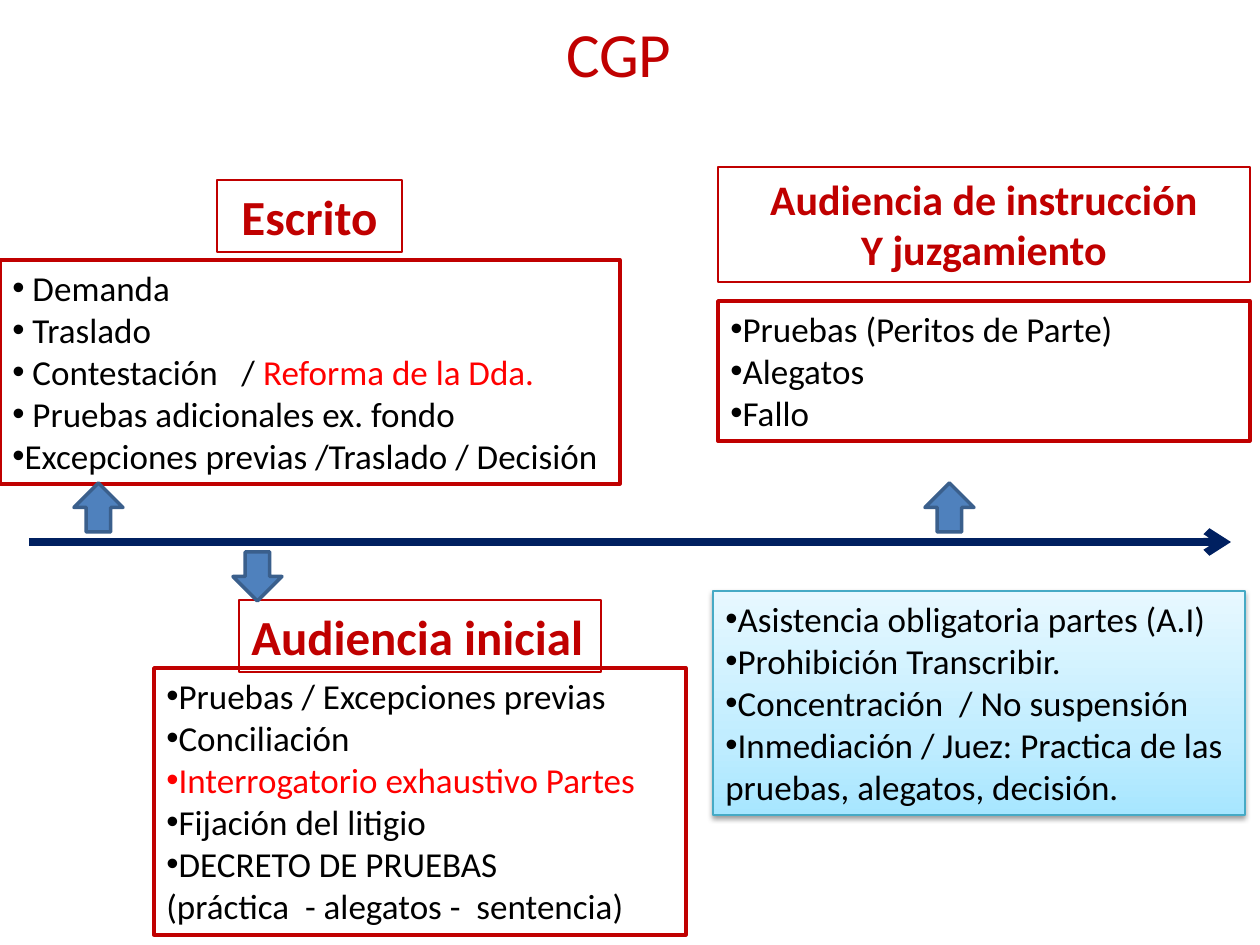
from copy import deepcopy
from lxml import etree
from pptx import Presentation
from pptx import util as u
from pptx.dml.color import RGBColor
from pptx.enum import shapes, text
from pptx.oxml import ns

PX = u.Inches(1) / 126
FONT = "Calibri"
CRIMSON, RED, BLACK, WHITE = "C00000", "FF0000", "000000", "FFFFFF"
NAVY, BLUE, BLUE_EDGE, CYAN = "002060", "4F81BD", "3A5F8C", "46AAC5"
GRADIENT = [(0, "A7E6FF"), (0.35, "C1EDFF"), (1, "E7F8FF")]

HEADINGS = [
    ((553, 8, 146, 89), ["CGP "], 36, False, True, None),
    ((217, 180, 185, 72), [" Escrito "], 28, True, True, CRIMSON),
    ((718, 167, 532, 115), ["Audiencia de instrucción", "Y juzgamiento"], 24, True, True, CRIMSON),
    ((239, 600, 362, 72), ["Audiencia inicial"], 28, True, False, CRIMSON),
]

WRITTEN = [
    ("•", [(" Demanda", BLACK)]),
    ("•", [(" Traslado", BLACK)]),
    ("•", [(" Contestación   / ", BLACK), ("Reforma de la Dda.", RED)]),
    ("•", [(" Pruebas adicionales ex. fondo", BLACK)]),
    ("•", [("Excepciones previas /Traslado / Decisión", BLACK)]),
]
TRIAL = [
    ("•", [("Pruebas (Peritos de Parte)", BLACK)]),
    ("•", [("Alegatos", BLACK)]),
    ("•", [("Fallo", BLACK)]),
]
INITIAL = [
    ("•", [("Pruebas / Excepciones previas", BLACK)]),
    ("•", [("Conciliación", BLACK)]),
    ("•", [("Interrogatorio exhaustivo Partes", RED)]),
    ("•", [("Fijación del litigio", BLACK)]),
    ("•", [("DECRETO DE PRUEBAS", BLACK)]),
    ("", [("(práctica  - alegatos -  sentencia)", BLACK)]),
]
RULES = [
    ("•", [("Asistencia obligatoria partes (A.I)", BLACK)]),
    ("•", [("Prohibición Transcribir.", BLACK)]),
    ("•", [("Concentración  / No suspensión", BLACK)]),
    ("•", [("Inmediación / Juez: Practica de las pruebas, alegatos, decisión.", BLACK)]),
]
LISTS = [
    ((0, 260, 620, 224), WRITTEN, CRIMSON, 2),
    ((718, 301, 532, 140), TRIAL, CRIMSON, 2),
    ((154, 668, 532, 267), INITIAL, CRIMSON, 2),
    ((713, 591, 532, 224), RULES, CYAN, 0.75),
]

TIMELINE = (29, 1231, 542)
ARROW_SIZE = 49
ARROWS = [(74, 483, False), (925, 483, False), (233, 552, True)]


def px(*lengths):
    return [u.Emu(round(length * PX)) for length in lengths]


def color(value):
    return RGBColor.from_string(value)


def style_line(line, value, width):
    line.color.rgb = color(value)
    line.width = u.Pt(width)


def add_child(parent, tag, **attributes):
    return etree.SubElement(parent, ns.qn(tag), attributes)


def style_run(run, size, value, bold=False):
    run.font.name = FONT
    run.font.size = u.Pt(size)
    run.font.bold = bold
    run.font.color.rgb = color(value)


def add_heading(slide, box, lines, size, bold, centered, border):
    shape = slide.shapes.add_textbox(*px(*box))
    frame = shape.text_frame
    frame.word_wrap = len(lines) > 1
    frame.text = "\n".join(lines)
    for paragraph in frame.paragraphs:
        paragraph.alignment = text.PP_ALIGN.CENTER if centered else text.PP_ALIGN.LEFT
        style_run(paragraph.runs[0], size, CRIMSON, bold)
    if border:
        style_line(shape.line, border, 0.75)


def add_list(slide, box, items, border, width):
    shape = slide.shapes.add_textbox(*px(*box))
    shape.fill.solid()
    shape.fill.fore_color.rgb = color(WHITE)
    style_line(shape.line, border, width)
    frame = shape.text_frame
    frame.word_wrap = True
    for index, (bullet, runs) in enumerate(items):
        paragraph = frame.add_paragraph() if index else frame.paragraphs[0]
        for words, value in runs:
            run = paragraph.add_run()
            run.text = words
            style_run(run, 20, value)
        if bullet:
            properties = paragraph._p.get_or_add_pPr()
            add_child(properties, "a:buFont", typeface="Arial")
            add_child(properties, "a:buChar", char=bullet)
    return shape


def add_gradient(shape):
    shape.fill.gradient()
    shape.fill.gradient_angle = 90
    stops = shape._element.spPr.find(".//" + ns.qn("a:gsLst"))
    stops.append(deepcopy(stops[-1]))
    for stop, (position, value) in zip(shape.fill.gradient_stops, GRADIENT):
        stop.position = position
        stop.color.rgb = color(value)


def add_shadow(shape):
    shape.shadow.inherit = False
    effects = shape._element.spPr.find(ns.qn("a:effectLst"))
    shadow = add_child(effects, "a:outerShdw", blurRad=str(u.Pt(3.1)), dist=str(u.Pt(1.6)),
                       dir="5400000", rotWithShape="0")
    shade = add_child(shadow, "a:srgbClr", val=BLACK)
    add_child(shade, "a:alpha", val="38000")


def add_timeline(slide):
    left, right, y = TIMELINE
    connector = slide.shapes.add_connector(shapes.MSO_CONNECTOR.STRAIGHT, *px(left, y, right, y))
    style_line(connector.line, NAVY, 4.5)
    add_child(connector.line._get_or_add_ln(), "a:tailEnd", type="arrow")
    add_child(connector._element.spPr, "a:effectLst")


def add_arrow(slide, left, top, down):
    kind = shapes.MSO_SHAPE.DOWN_ARROW if down else shapes.MSO_SHAPE.UP_ARROW
    shape = slide.shapes.add_shape(kind, *px(left, top, ARROW_SIZE, ARROW_SIZE))
    shape.shadow.inherit = False
    shape.fill.solid()
    shape.fill.fore_color.rgb = color(BLUE)
    style_line(shape.line, BLUE_EDGE, 2)


def main():
    presentation = Presentation()
    presentation.slide_width, presentation.slide_height = px(1260, 945)
    slide = presentation.slides.add_slide(presentation.slide_layouts[6])
    boxes = [add_list(slide, *entry) for entry in LISTS]
    add_gradient(boxes[-1])
    add_shadow(boxes[-1])
    for heading in HEADINGS:
        add_heading(slide, *heading)
    add_timeline(slide)
    for arrow in ARROWS:
        add_arrow(slide, *arrow)
    presentation.save("out.pptx")


if __name__ == "__main__":
    main()
